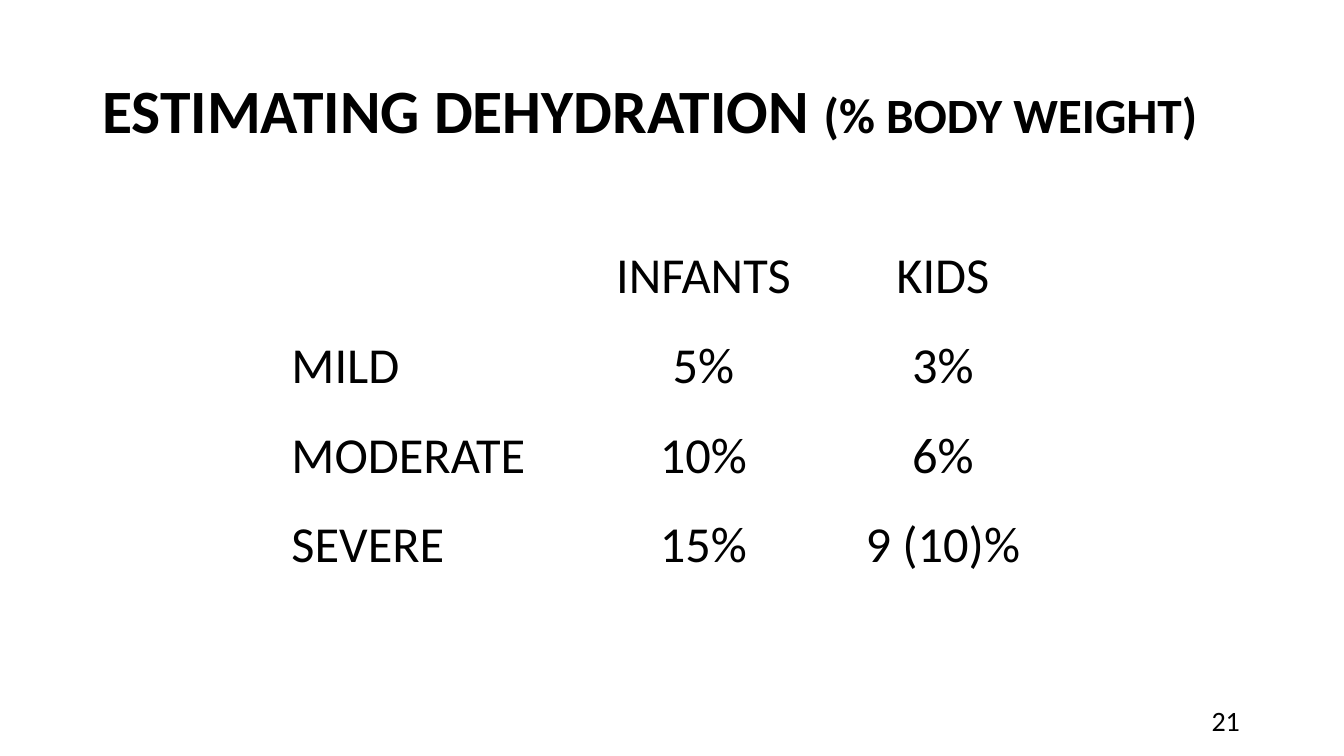
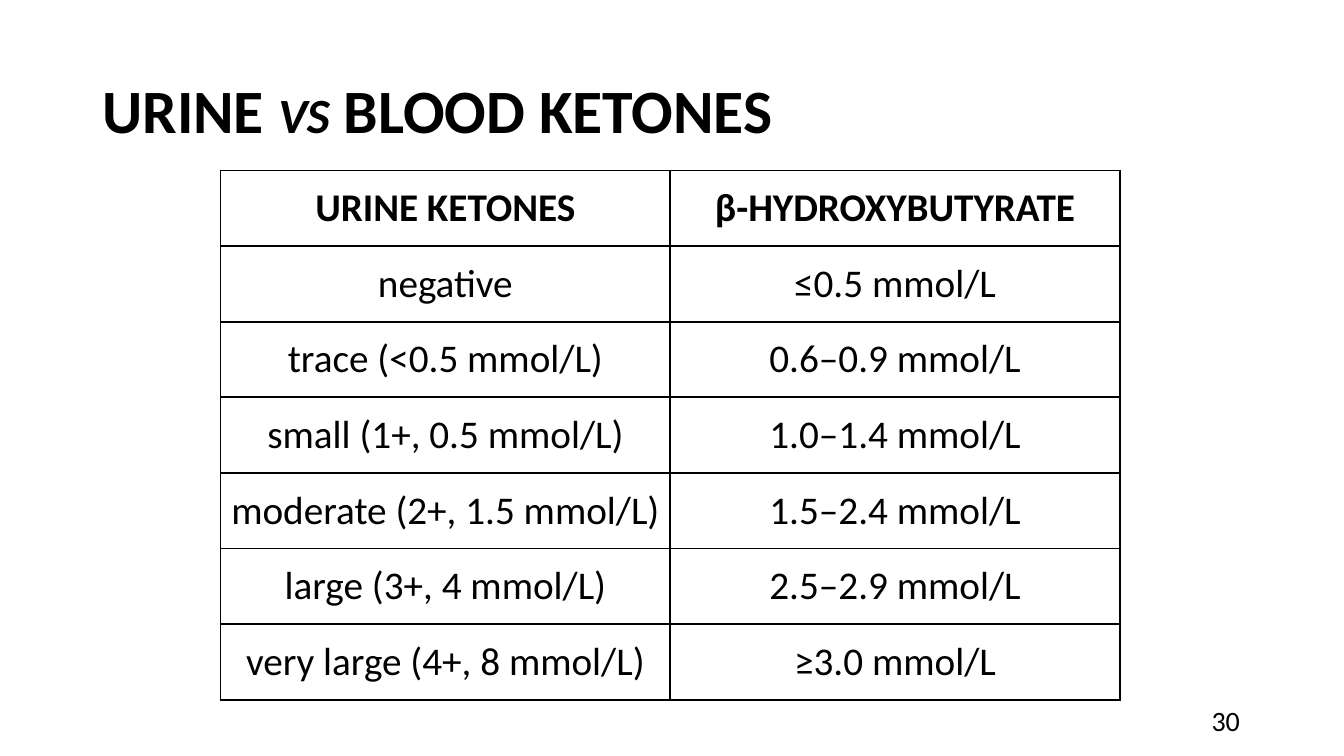
import pptx
import pptx.dml.color
import pptx.enum.text
import pptx.util
from lxml import etree
from pptx.oxml.ns import qn

Pt = pptx.util.Pt
ALIGN = pptx.enum.text.PP_ALIGN
MIDDLE = pptx.enum.text.MSO_ANCHOR.MIDDLE
BLACK = pptx.dml.color.RGBColor(0, 0, 0)
FONT = "Calibri"
SLIDE_SIZE = (960, 540)
TITLE_BOX = (66, 29, 828, 104)
NUMBER_BOX = (835.2, 500.4, 57.6, 28.8)

# Title parts are (text, small caps, italic).
SLIDES = [
    {
        "title": [("ESTIMATING DEHYDRATION ", False, False),
                  ("(% body weight)", True, False)],
        "number": 21,
        "table": {
            "origin": (201, 165.6), "columns": (216, 171, 171), "row_height": 64,
            "size": 36, "label_column": True, "bold_header": False, "border": None,
            "rows": [
                ("", "INFANTS", "KIDS"),
                ("MILD", "5%", "3%"),
                ("MODERATE", "10%", "6%"),
                ("SEVERE", "15%", "9 (10)%"),
            ],
        },
    },
    {
        "title": [("URINE ", False, False), ("vs", True, True),
                  (" BLOOD KETONES", False, False)],
        "number": 30,
        "table": {
            "origin": (157.5, 121.8), "columns": (321.2, 321.2), "row_height": 54,
            "size": 28, "label_column": False, "bold_header": True, "border": 1.5,
            "rows": [
                ("URINE KETONES", "β-HYDROXYBUTYRATE"),
                ("negative", "≤0.5 mmol/L"),
                ("trace (<0.5 mmol/L)", "0.6–0.9 mmol/L"),
                ("small (1+, 0.5 mmol/L)", "1.0–1.4 mmol/L"),
                ("moderate (2+, 1.5 mmol/L)", "1.5–2.4 mmol/L"),
                ("large (3+, 4 mmol/L)", "2.5–2.9 mmol/L"),
                ("very large (4+, 8 mmol/L)", "≥3.0 mmol/L"),
            ],
        },
    },
]


def style_font(font, size, bold=False, italic=False):
    font.name, font.size, font.color.rgb = FONT, Pt(size), BLACK
    font.bold, font.italic = bold, italic


def add_text_box(slide, box):
    """Add a wrapping, vertically centred box and return its first paragraph."""
    tf = slide.shapes.add_textbox(*map(Pt, box)).text_frame
    tf.word_wrap = True
    tf.vertical_anchor = MIDDLE
    return tf.paragraphs[0]


def add_title(slide, parts):
    p = add_text_box(slide, TITLE_BOX)
    p.line_spacing = 0.9
    for text, small_caps, italic in parts:
        r = p.add_run()
        r.text = text
        style_font(r.font, 44, bold=True, italic=italic)
        if small_caps:
            r._r.get_or_add_rPr().set("cap", "small")


def add_number(slide, number):
    p = add_text_box(slide, NUMBER_BOX)
    p.text = str(number)
    p.alignment = ALIGN.RIGHT
    style_font(p.runs[0].font, 20)


def add_borders(cell, width):
    tcPr = cell._tc.get_or_add_tcPr()
    for side in ("lnL", "lnR", "lnT", "lnB"):
        ln = etree.SubElement(tcPr, qn("a:" + side), w=str(Pt(width)))
        fill = etree.SubElement(ln, qn("a:solidFill"))
        etree.SubElement(fill, qn("a:srgbClr"), val=str(BLACK))


def add_table(slide, spec_table):
    rows, columns = spec_table["rows"], spec_table["columns"]
    height = spec_table["row_height"]
    left, top = spec_table["origin"]
    table = slide.shapes.add_table(
        len(rows), len(columns), Pt(left), Pt(top),
        Pt(sum(columns)), Pt(height * len(rows))).table
    table.first_row = table.horz_banding = False
    for column, width in zip(table.columns, columns):
        column.width = Pt(width)
    for i, texts in enumerate(rows):
        table.rows[i].height = Pt(height)
        for j, text in enumerate(texts):
            cell = table.cell(i, j)
            if spec_table["border"]:
                add_borders(cell, spec_table["border"])
            cell.fill.background()
            cell.vertical_anchor = MIDDLE
            p = cell.text_frame.paragraphs[0]
            p.text = text
            is_label = spec_table["label_column"] and j == 0
            p.alignment = ALIGN.LEFT if is_label else ALIGN.CENTER
            for r in p.runs:
                style_font(r.font, spec_table["size"],
                           bold=spec_table["bold_header"] and i == 0)


def main():
    prs = pptx.Presentation()
    prs.slide_width, prs.slide_height = map(Pt, SLIDE_SIZE)
    for content in SLIDES:
        s = prs.slides.add_slide(prs.slide_layouts[6])
        add_title(s, content["title"])
        add_table(s, content["table"])
        add_number(s, content["number"])
    prs.save("out.pptx")


if __name__ == "__main__":
    main()
